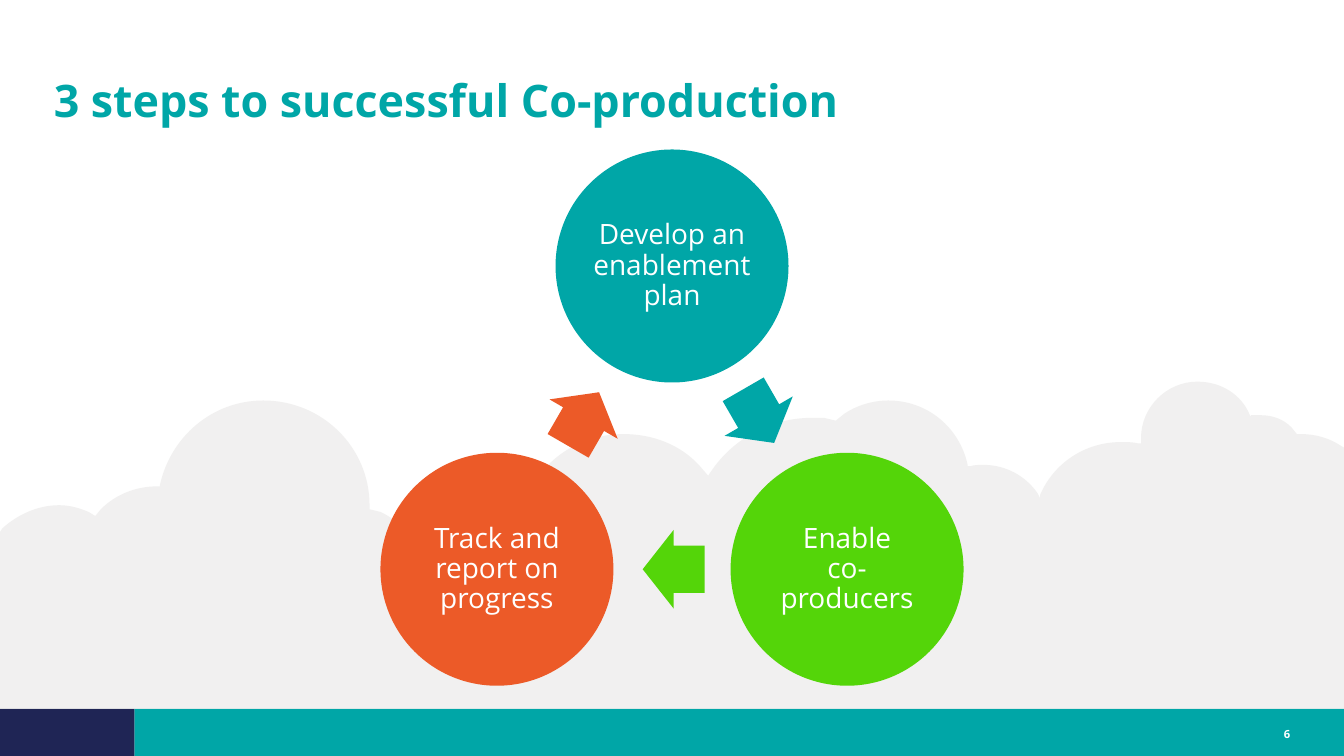
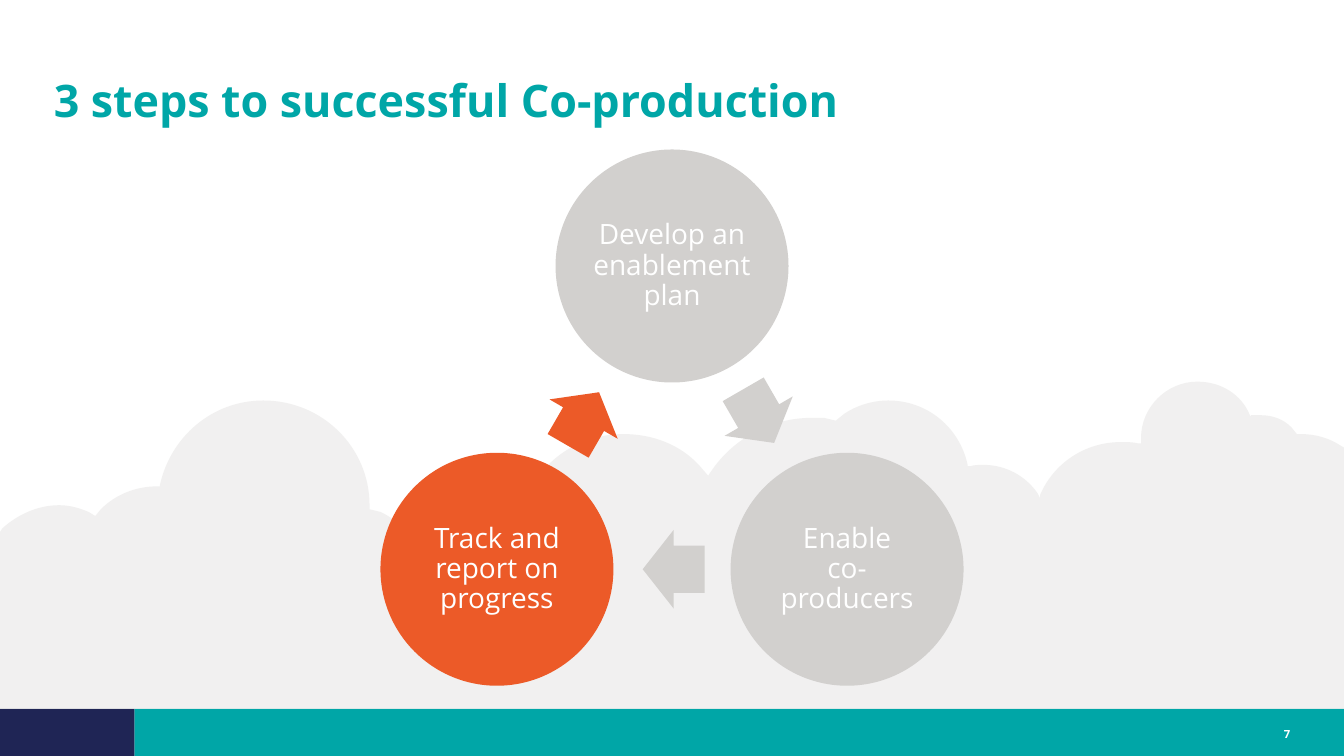
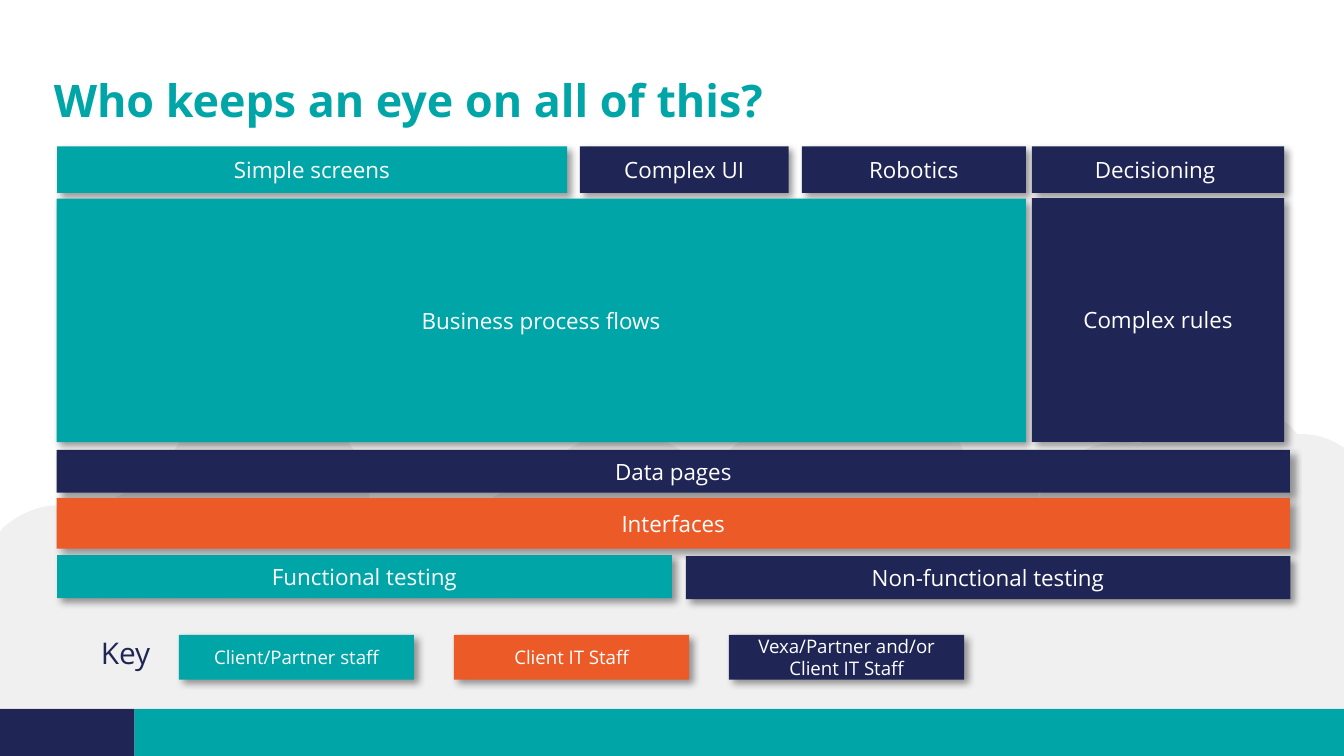
from math import cos, radians, sin

from lxml import etree
from pptx import Presentation
from pptx.dml.color import RGBColor
from pptx.enum.shapes import MSO_SHAPE
from pptx.enum.text import MSO_ANCHOR, MSO_AUTO_SIZE, PP_ALIGN
from pptx.oxml import parse_xml
from pptx.oxml.ns import nsdecls, qn
from pptx.util import Pt

FONT = "Open Sans"
TEAL, NAVY, ORANGE, GREEN = "00A6A7", "1F2555", "EC5A28", "54D509"
GREY, WHITE = "D2D0CE", "FFFFFF"

WIDTH, HEIGHT = 720, 405
BAND_TOP, BAND_SPLIT = 379.8, 72

# Cloud outline: two numbers are a line to a point, six are a cubic curve.
CLOUD_START = (641.5, 204.5)
CLOUD = [
    (654.5, 204.5, 665.3, 211.7, 669.6, 222.5),
    (669.6, 223.2), (670.3, 222.5),
    (671.8, 222.5, 673.9, 222.5, 675.4, 222.5),
    (681.8, 222.5, 687.6, 224.6, 691.9, 229),
    (694.8, 232.6), (697, 232.6),
    (704.9, 232.6, 712.1, 234.7, 718.6, 239),
    (WIDTH, 239.8), (WIDTH, BAND_TOP), (0, BAND_TOP),
    (0, 348.5, 0, 316.8, 0, 285.1),
    (1.4, 283),
    (9.4, 275.8, 20.2, 270.7, 31.7, 270.7),
    (37.4, 270.7, 42.5, 272.2, 47.5, 274.3),
    (51.1, 276.5), (54, 272.9),
    (61.9, 265, 72.7, 260.6, 84.2, 260.6),
    (85.7, 260.6), (85.7, 259.9),
    (91.4, 234, 113.8, 214.6, 141.1, 214.6),
    (172.8, 214.6, 198, 239.8, 198, 270.7),
    (198, 272.9), (203.8, 274.3),
    (210.2, 277.2, 215.3, 281.5, 218.9, 287.3),
    (220.3, 290.2), (223.2, 288.7),
    (227.5, 285.1, 232.6, 283.7, 239, 283.7),
    (240.5, 283.7, 242.6, 283.7, 244.8, 284.4),
    (249.1, 285.8), (250.6, 282.2),
    (255.6, 270, 267.8, 261.4, 282.2, 261.4),
    (285.1, 261.4), (287.3, 257),
    (297.4, 241.9, 314.6, 232.6, 334.1, 232.6),
    (349.9, 232.6, 364.3, 238.3, 374.4, 249.1),
    (379.4, 254.9), (380.9, 252.7),
    (392.4, 235.4, 412.6, 223.9, 434.9, 223.9),
    (437, 223.9, 439.2, 223.9, 441.4, 223.9),
    (447.8, 225.4), (452.2, 221.8),
    (458.6, 217.4, 467.3, 214.6, 475.9, 214.6),
    (496.8, 214.6, 514.1, 229, 518.4, 249.1),
    (518.4, 249.8), (519.8, 249.8),
    (522, 249.1, 524.2, 249.1, 527, 249.1),
    (538.6, 249.1, 549.4, 254.9, 555.8, 264.2),
    (557.3, 267.1), (557.3, 265),
    (564.5, 248.4, 581, 236.9, 600.5, 236.9),
    (604.1, 236.9, 607, 236.9, 609.8, 237.6),
    (611.3, 237.6), (611.3, 234.7),
    (611.3, 218.2, 625, 204.5, 641.5, 204.5),
]

STEPS_TITLE = "3 steps to successful Co-production"
STEPS = ["Develop an enablement plan", "Enable\vco-producers", "Track and report on progress"]
STEP_SLIDES = [("6", [TEAL, GREEN, ORANGE]), ("7", [GREY, GREY, ORANGE])]
RING_CENTRE, RING_RADIUS = (360, 250.8), 108.3
CIRCLE, CIRCLE_TEXT = 124.8, 88.4
ARROW_WIDTH, ARROW_HEIGHT, ARROW_SETBACK = 33.2, 42.2, 0.9

OWNERS_TITLE = "Who keeps an eye on all of this?"
# Each row: top, height, then its boxes as (text, left, width, colour).
WORK_ROWS = [
    (78.4, 25, [("Simple screens", 30.6, 273.2, TEAL), ("Complex UI", 310.7, 111.8, NAVY),
                ("Robotics", 429.6, 120, NAVY), ("Decisioning ", 552.8, 135.2, NAVY)]),
    (241, 23, [("Data pages", 30.4, 660.7, NAVY)]),
    (106.5, 130.4, [("Business process flows", 30.3, 519.3, TEAL)]),
    (106.1, 130.6, [("Complex rules", 552.8, 135.2, NAVY)]),
    (266.7, 27.2, [("Interfaces", 30.4, 660.7, ORANGE)]),
    (297.4, 23.1, [("Functional testing", 30.6, 329.4, TEAL)]),
    (297.9, 23.1, [("Non-functional testing", 367.4, 323.9, NAVY)]),
]
KEY = [("Client/Partner staff", TEAL), ("Client IT Staff", ORANGE),
       ("Vexa/Partner and/or Client IT Staff", NAVY)]
KEY_LEFT, KEY_TOP, KEY_STEP, KEY_WIDTH, KEY_HEIGHT = 95.8, 340.1, 147.35, 126, 24


def colour(value):
    return RGBColor.from_string(value)


def points(*lengths):
    return [Pt(length) for length in lengths]


def paint(shape, fill):
    shape.shadow.inherit = False
    shape.fill.solid()
    shape.fill.fore_color.rgb = colour(fill)
    shape.line.fill.background()
    return shape


def add_shape(parent, kind, left, top, width, height, fill):
    return paint(parent.shapes.add_shape(kind, *points(left, top, width, height)), fill)


def write(shape, text, size=12, color=WHITE, bold=False, align=PP_ALIGN.CENTER,
          anchor=MSO_ANCHOR.MIDDLE, inset=None, spacing=None, wrap=True):
    frame = shape.text_frame
    frame.auto_size = MSO_AUTO_SIZE.NONE
    frame.word_wrap = wrap
    frame.vertical_anchor = anchor
    if inset is not None:
        frame.margin_left = frame.margin_right = Pt(inset)
        frame.margin_top = frame.margin_bottom = Pt(inset)
    paragraph = frame.paragraphs[0]
    paragraph.text = text
    paragraph.alignment = align
    paragraph.line_spacing = spacing
    for run in paragraph.runs:
        run.font.name = FONT
        run.font.size = Pt(size)
        run.font.bold = bold
        run.font.color.rgb = colour(color)


def add_text(parent, text, left, top, width, height, inset=0, **style):
    box = parent.shapes.add_textbox(*points(left, top, width, height))
    write(box, text, inset=inset, **style)


def add_cloud(slide):
    """Draw the outline through all nodes, then turn each curve's three lines into one."""
    nodes = [part[start:start + 2] for part in CLOUD for start in range(0, len(part), 2)]
    units = [(round(x * 100), round(y * 100)) for x, y in [CLOUD_START] + nodes]
    builder = slide.shapes.build_freeform(*units[0], scale=Pt(1) / 100)
    builder.add_line_segments(units[1:], close=True)
    cloud = paint(builder.convert_to_shape(), GREY)

    lines = iter(list(cloud.element.spPr.iter(qn("a:lnTo"))))
    for part in CLOUD:
        first = next(lines)
        if len(part) == 6:
            first.tag = qn("a:cubicBezTo")
            for line in (next(lines), next(lines)):
                first.append(line[0])
                line.getparent().remove(line)
    fill = cloud.element.spPr.find(qn("a:solidFill"))
    etree.SubElement(fill[0], qn("a:alpha"), val="30000")
    return cloud


def add_backdrop(slide, layout):
    """Draw the bands and the cloud, then move them to the layout all slides share."""
    band_height = HEIGHT - BAND_TOP
    backdrop = [
        add_shape(slide, MSO_SHAPE.RECTANGLE, BAND_SPLIT, BAND_TOP,
                  WIDTH - BAND_SPLIT, band_height, TEAL),
        add_shape(slide, MSO_SHAPE.RECTANGLE, 0, BAND_TOP, BAND_SPLIT, band_height, NAVY),
        add_cloud(slide),
    ]
    for number, shape in enumerate(backdrop, start=101):
        shape.element.nvSpPr.cNvPr.set("id", str(number))
        layout.shapes.element.append(shape.element)


def add_slide(presentation, layout, title, number=None):
    slide = presentation.slides.add_slide(layout)
    heading = slide.shapes.title
    heading.left, heading.top, heading.width, heading.height = points(28.8, 14.4, 662.4, 54)
    write(heading, title, size=24, color=TEAL, bold=True, align=PP_ALIGN.LEFT,
          anchor=MSO_ANCHOR.BOTTOM, inset=0, spacing=0.9)
    if number:
        add_text(slide, number, 666, 382.2, 25.2, 14.4, size=6, bold=True,
                 align=PP_ALIGN.RIGHT, anchor=MSO_ANCHOR.BOTTOM)
    return slide


def add_cycle(slide, colours):
    group = slide.shapes.add_group_shape()
    centres = [(RING_CENTRE[0] + RING_RADIUS * cos(radians(angle)),
                RING_CENTRE[1] + RING_RADIUS * sin(radians(angle)))
               for angle in (-90, 30, 150)]
    for index, (text, fill) in enumerate(zip(STEPS, colours)):
        x, y = centres[index]
        add_shape(group, MSO_SHAPE.OVAL, x - CIRCLE / 2, y - CIRCLE / 2,
                  CIRCLE, CIRCLE, fill)
        add_text(group, text, x - CIRCLE_TEXT / 2, y - CIRCLE_TEXT / 2,
                 CIRCLE_TEXT, CIRCLE_TEXT, size=15, inset=1.5, spacing=0.9)

        next_x, next_y = centres[(index + 1) % len(centres)]
        heading = 60 + 120 * index
        middle_x = (x + next_x) / 2 - ARROW_SETBACK * cos(radians(heading))
        middle_y = (y + next_y) / 2 - ARROW_SETBACK * sin(radians(heading))
        arrow = add_shape(group, MSO_SHAPE.RIGHT_ARROW, middle_x - ARROW_WIDTH / 2,
                          middle_y - ARROW_HEIGHT / 2, ARROW_WIDTH, ARROW_HEIGHT, fill)
        arrow.adjustments[0], arrow.adjustments[1] = 0.6, 0.5
        arrow.rotation = heading


def add_box(slide, text, left, top, width, height, fill, size=12):
    box = add_shape(slide, MSO_SHAPE.RECTANGLE, left, top, width, height, fill)
    box.element.spPr.find(qn("a:effectLst")).append(parse_xml(
        f'<a:outerShdw {nsdecls("a")} blurRad="{Pt(4)}" dist="{Pt(3)}" dir="2700000" '
        'algn="tl" rotWithShape="0"><a:srgbClr val="000000"><a:alpha val="40000"/>'
        '</a:srgbClr></a:outerShdw>'))
    write(box, text, size=size)


def add_owners(slide):
    for top, height, boxes in WORK_ROWS:
        for text, left, width, fill in boxes:
            add_box(slide, text, left, top, width, height, fill)
    add_text(slide, "Key", 54, KEY_TOP, 34, KEY_HEIGHT, size=16, color=NAVY,
             align=PP_ALIGN.LEFT, anchor=MSO_ANCHOR.TOP, wrap=False)
    for index, (text, fill) in enumerate(KEY):
        add_box(slide, text, KEY_LEFT + index * KEY_STEP, KEY_TOP,
                KEY_WIDTH, KEY_HEIGHT, fill, size=10)


def main():
    presentation = Presentation()
    presentation.slide_width, presentation.slide_height = points(WIDTH, HEIGHT)
    layout = presentation.slide_layouts.get_by_name("Title Only")
    for number, colours in STEP_SLIDES:
        add_cycle(add_slide(presentation, layout, STEPS_TITLE, number), colours)
    owners = add_slide(presentation, layout, OWNERS_TITLE)
    add_backdrop(owners, layout)
    add_owners(owners)
    presentation.save("out.pptx")


if __name__ == "__main__":
    main()
